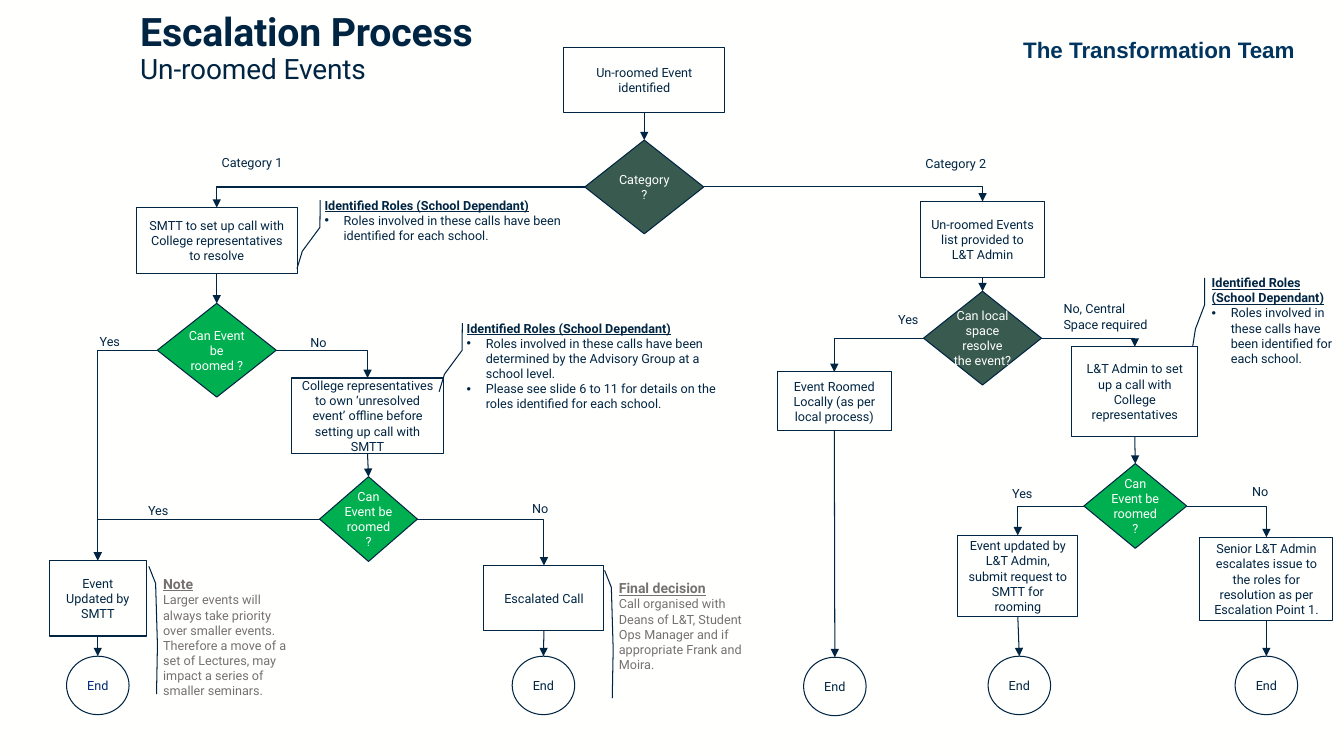
from dataclasses import dataclass

from lxml.etree import SubElement
from pptx import Presentation
from pptx.dml.color import RGBColor
from pptx.enum.shapes import MSO_CONNECTOR, MSO_SHAPE
from pptx.enum.text import MSO_ANCHOR, MSO_AUTO_SIZE, PP_ALIGN
from pptx.oxml.ns import qn
from pptx.util import Pt

PX = 9144  # 100 px to the inch
NAVY, GREY, WHITE = "002542", "767171", "FFFFFE"
GREEN, DARK_GREEN = "00B050", "395A4F"
TOP, LEFT, BOTTOM, RIGHT = range(4)
NO_INSETS = dict(margin_left=0, margin_top=0, margin_right=0, margin_bottom=0)


@dataclass
class Kind:
    preset: MSO_SHAPE
    fill: str | None = None
    ink: str = NAVY
    tight: bool = False


@dataclass
class Step:
    kind: str
    box: tuple[int, int, int, int]
    text: str
    ink: str | None = None


@dataclass
class Link:
    start: str
    side: int
    end: str


@dataclass
class Label:
    box: tuple[int, int, int, int]
    text: str


@dataclass
class Callout:
    box: tuple[int, int, int, int]
    heading: str
    lines: list[str]
    is_roles: bool = True


KINDS = {
    "task": Kind(MSO_SHAPE.RECTANGLE),
    "list": Kind(MSO_SHAPE.RECTANGLE, WHITE),
    "school": Kind(MSO_SHAPE.DIAMOND, GREEN, WHITE, True),
    "local": Kind(MSO_SHAPE.DIAMOND, DARK_GREEN, WHITE, True),
    "end": Kind(MSO_SHAPE.OVAL, tight=True),
}

ROOMED = "Can Event be roomed ?"
STEPS = {
    "identified": Step("task", (559, 47, 160, 65), "Un-roomed Event identified"),
    "category": Step("local", (580, 139, 118, 93), "Category ?"),
    # Category 1
    "smtt call": Step("task", (135, 206, 160, 65),
                      "SMTT to set up call with College representatives to resolve"),
    "first check": Step("school", (156, 301, 118, 93), ROOMED),
    "offline": Step("task", (289, 375, 151, 75), "College representatives to own ‘unresolved "
                    "event’ offline before setting up call with SMTT"),
    "second check": Step("school", (317, 473, 97, 84), ROOMED),
    "updated": Step("task", (49, 556, 96, 75), "Event Updated by SMTT"),
    "escalated": Step("task", (480, 561, 119, 65), "Escalated Call"),
    "updated end": Step("end", (66, 651, 62, 58), "End", "002776"),
    "escalated end": Step("end", (508, 651, 62, 58), "End"),
    # Category 2
    "event list": Step("list", (913, 200, 123, 75),
                       "Un-roomed Events list provided to L&T Admin"),
    "local check": Step("local", (916, 289, 117, 93), "Can local space resolve the event?"),
    "roomed locally": Step("task", (771, 369, 113, 58),
                           "Event Roomed Locally (as per local process)"),
    "admin call": Step("task", (1063, 344, 125, 89),
                       "L&T Admin to set up a call with College representatives"),
    "admin check": Step("school", (1075, 460, 102, 84), ROOMED),
    "admin update": Step("task", (950, 531, 119, 81),
                         "Event updated by L&T Admin, submit request to SMTT for rooming"),
    "senior": Step("task", (1190, 533, 132, 83), "Senior L&T Admin escalates issue to the "
                   "roles for resolution as per Escalation Point 1."),
    "local end": Step("end", (797, 652, 62, 58), "End"),
    "admin end": Step("end", (980, 651, 62, 58), "End"),
    "senior end": Step("end", (1225, 651, 62, 58), "End"),
}

LINKS = [
    Link("identified", BOTTOM, "category"),
    Link("category", LEFT, "smtt call"), Link("category", RIGHT, "event list"),
    Link("smtt call", BOTTOM, "first check"),
    Link("first check", LEFT, "updated"), Link("first check", RIGHT, "offline"),
    Link("offline", BOTTOM, "second check"),
    Link("second check", LEFT, "updated"), Link("second check", RIGHT, "escalated"),
    Link("updated", BOTTOM, "updated end"), Link("escalated", BOTTOM, "escalated end"),
    Link("event list", BOTTOM, "local check"),
    Link("local check", LEFT, "roomed locally"), Link("local check", RIGHT, "admin call"),
    Link("roomed locally", BOTTOM, "local end"), Link("admin call", BOTTOM, "admin check"),
    Link("admin check", LEFT, "admin update"), Link("admin check", RIGHT, "senior"),
    Link("admin update", BOTTOM, "admin end"), Link("senior", BOTTOM, "senior end"),
]

LABELS = [
    Label((210, 149, 93, 25), "Category 1"), Label((908, 150, 93, 25), "Category 2"),
    Label((89, 326, 93, 25), "Yes"), Label((298, 327, 93, 25), "No"),
    Label((137, 494, 93, 25), "Yes"), Label((518, 492, 93, 25), "No"),
    Label((881, 304, 93, 25), "Yes"), Label((1045, 294, 113, 40), "No, Central Space required"),
    Label((994, 477, 93, 25), "Yes"), Label((1232, 475, 93, 25), "No"),
]

ROLES = "Identified Roles (School Dependant)"
IDENTIFIED = "Roles involved in these calls have been identified for each school."
CALLOUTS = [
    Callout((312, 191, 278, 126), ROLES, [IDENTIFIED]),
    Callout((453, 313, 278, 126), ROLES, [
        "Roles involved in these calls have been determined by the Advisory Group at a school level.",
        "Please see slide 6 to 11 for details on the roles identified for each school."]),
    Callout((1192, 268, 144, 126), ROLES, [IDENTIFIED]),
    Callout((152, 566, 150, 133), "Note", [
        "Larger events will always take priority over smaller events. Therefore a move of a set "
        "of Lectures, may impact a series of smaller seminars."], False),
    Callout((604, 570, 150, 133), "Final decision", [
        "Call organised with Deans of L&T, Student Ops Manager and if appropriate Frank and "
        "Moira."], False),
]
ROLES_LEADER = (0.061, 0.02, 0.275, 0.019, 0.463, -0.044, 0.601, -0.063)
REMARK_LEADER = (0.923, 0.022, 0.557, 0.028, 0.096, 0.016, -0.031, -0.029)


def rgb(value: str) -> RGBColor:
    return RGBColor.from_string(value)


def emu(box: tuple[int, ...]) -> list[int]:
    return [length * PX for length in box]


def apply(target, **values) -> None:
    for name, value in values.items():
        setattr(target, name, value)


def format_font(font, size: int, ink: str, **values) -> None:
    apply(font, **{"name": "Roboto", "size": Pt(size), "bold": False, **values})
    font.color.rgb = rgb(ink)


def add_outlined(slide, preset, box, fill: str | None = None):
    shape = slide.shapes.add_shape(preset, *emu(box))
    shape.shadow.inherit = False
    if fill:
        shape.fill.solid()
        shape.fill.fore_color.rgb = rgb(fill)
    else:
        shape.fill.background()
    shape.line.color.rgb = rgb(NAVY)
    shape.line.width = Pt(0.75)
    return shape


def add_step(slide, step: Step):
    kind = KINDS[step.kind]
    shape = add_outlined(slide, kind.preset, step.box, kind.fill)
    apply(shape.text_frame, text=step.text, word_wrap=True, vertical_anchor=MSO_ANCHOR.MIDDLE,
          **(NO_INSETS if kind.tight else {}))
    paragraph = shape.text_frame.paragraphs[0]
    paragraph.alignment = PP_ALIGN.CENTER
    format_font(paragraph.font, 9, step.ink or kind.ink)
    return shape


def add_link(slide, link: Link, shapes: dict) -> None:
    straight = link.side == BOTTOM
    arrow = slide.shapes.add_connector(
        MSO_CONNECTOR.STRAIGHT if straight else MSO_CONNECTOR.ELBOW, 0, 0, 0, 0)
    arrow.begin_connect(shapes[link.start], link.side)
    arrow.end_connect(shapes[link.end], TOP)
    arrow.line.color.rgb = rgb(NAVY)
    arrow.line.width = Pt(0.75)
    properties = arrow._element.spPr
    if not straight:  # one corner only
        properties.find(qn("a:prstGeom")).set("prst", "bentConnector2")
    SubElement(properties.find(qn("a:ln")), qn("a:tailEnd"), type="triangle")
    SubElement(properties, qn("a:effectLst"))


def add_text(slide, label: Label, size: int = 9, ink: str = NAVY, alignment=PP_ALIGN.LEFT,
             **values) -> None:
    frame = slide.shapes.add_textbox(*emu(label.box)).text_frame
    apply(frame, text=label.text, word_wrap=True, auto_size=MSO_AUTO_SIZE.SHAPE_TO_FIT_TEXT)
    frame.paragraphs[0].alignment = alignment
    format_font(frame.paragraphs[0].font, size, ink, **values)


def add_bullet(paragraph) -> None:
    properties = paragraph._p.get_or_add_pPr()
    properties.set("marL", str(19 * PX))
    properties.set("indent", str(-19 * PX))
    SubElement(properties, qn("a:buFont"), typeface="Arial")
    SubElement(properties, qn("a:buChar"), char="•")


def add_callout(slide, callout: Callout) -> None:
    shape = add_outlined(slide, MSO_SHAPE.LINE_CALLOUT_3_NO_BORDER, callout.box)
    for index, value in enumerate(ROLES_LEADER if callout.is_roles else REMARK_LEADER):
        shape.adjustments[index] = value
    frame = shape.text_frame
    apply(frame, text="\n".join([callout.heading, *callout.lines]), word_wrap=True,
          vertical_anchor=MSO_ANCHOR.TOP)
    ink = NAVY if callout.is_roles else GREY
    heading, *lines = frame.paragraphs
    for paragraph in frame.paragraphs:
        paragraph.alignment = PP_ALIGN.LEFT
    format_font(heading.font, 9 if callout.is_roles else 10, ink, bold=True, underline=True)
    for line in lines:
        if callout.is_roles:
            add_bullet(line)
        format_font(line.font, 9, ink)


def set_title(slide) -> None:
    title = slide.shapes.title
    apply(title, **dict(zip(("left", "top", "width", "height"), emu((129, -10, 423, 117)))))
    apply(title.text_frame, text="Escalation Process\vUn-roomed Events", word_wrap=True,
          auto_size=MSO_AUTO_SIZE.NONE, vertical_anchor=MSO_ANCHOR.MIDDLE)
    paragraph = title.text_frame.paragraphs[0]
    apply(paragraph, alignment=PP_ALIGN.LEFT, line_spacing=0.9)
    for run, size, bold in zip(paragraph.runs, (28, 20), (True, False)):
        format_font(run.font, size, NAVY, bold=bold)
        run._r.get_or_add_rPr().set("spc", "-10")


def main() -> None:
    deck = Presentation()
    apply(deck, slide_width=1333 * PX, slide_height=750 * PX)
    slide = deck.slides.add_slide(deck.slide_layouts[5])
    slide.background.fill.solid()
    slide.background.fill.fore_color.rgb = rgb(WHITE)
    set_title(slide)
    add_text(slide, Label((995, 31, 309, 37), "The Transformation Team"), 16, "00355F",
             PP_ALIGN.CENTER, name="Arial", bold=True)
    # Flowchart
    shapes = {key: add_step(slide, step) for key, step in STEPS.items()}
    for link in LINKS:
        add_link(slide, link, shapes)
    # Branch labels and remarks
    for label in LABELS:
        add_text(slide, label)
    for callout in CALLOUTS:
        add_callout(slide, callout)
    deck.save("out.pptx")


if __name__ == "__main__":
    main()
